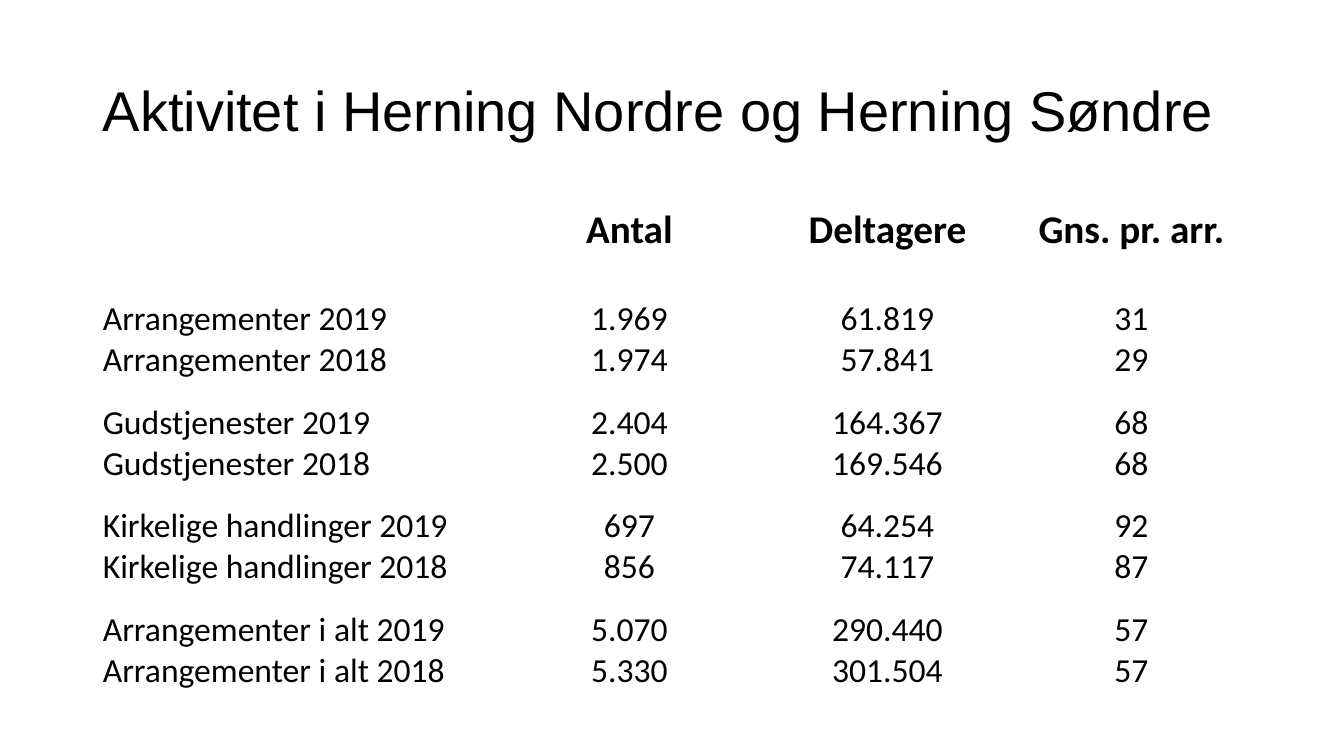
"""Build a slide with a table of church activity in Herning, 2019 against 2018."""
from pptx import Presentation
from pptx import util as u
from pptx.dml.color import RGBColor
from pptx.enum import text as t

BLACK = RGBColor(0, 0, 0)
WHITE = RGBColor(255, 255, 255)

LEFT, WIDTH = 66.24, 828
COLUMN_WIDTHS = [287.28, 192.24, 176.4, 172.08]
HEADER_HEIGHT, ROW_HEIGHT = 65.52, 74.16
HEADINGS = ["", "Antal", "Deltagere", "Gns. pr. arr."]
YEARS = ["2019", "2018"]
ACTIVITIES = {
    "Arrangementer": [("1.969", "1.974"), ("61.819", "57.841"), ("31", "29")],
    "Gudstjenester": [("2.404", "2.500"), ("164.367", "169.546"), ("68", "68")],
    "Kirkelige handlinger": [("697", "856"), ("64.254", "74.117"), ("92", "87")],
    "Arrangementer i alt": [("5.070", "5.330"), ("290.440", "301.504"), ("57", "57")],
}


class SlideBuilder:
    def __init__(self, slide):
        self.slide = slide
        self.title_font, self.title_size = "Arial", 40
        self.table_font, self.heading_size, self.body_size = "Calibri", 28, 24

    def add_span(self, para, text, font, size, bold=False, align=t.PP_ALIGN.LEFT):
        para.alignment = align
        span = para.add_run()
        span.text = text
        span.font.name = font
        span.font.size = u.Pt(size)
        span.font.bold = bold
        span.font.color.rgb = BLACK

    def title(self, text, left, top, width, height):
        box = self.slide.shapes.title
        box.left, box.top, box.width, box.height = map(u.Pt, (left, top, width, height))
        frame = box.text_frame
        frame.word_wrap = True
        frame.auto_size = t.MSO_AUTO_SIZE.NONE
        frame.vertical_anchor = t.MSO_ANCHOR.MIDDLE
        para = frame.paragraphs[0]
        para.line_spacing = 0.9
        self.add_span(para, text, self.title_font, self.title_size)

    def cell(self, cell, lines, size, bold, align):
        cell.fill.solid()
        cell.fill.fore_color.rgb = WHITE
        frame = cell.text_frame
        for index, line in enumerate(lines):
            para = frame.add_paragraph() if index else frame.paragraphs[0]
            self.add_span(para, line, self.table_font, size, bold, align)

    def table(self, rows, left, top, widths, heights):
        frame = self.slide.shapes.add_table(
            len(rows), len(widths), u.Pt(left), u.Pt(top),
            u.Pt(sum(widths)), u.Pt(sum(heights)))
        table = frame.table
        table.horz_banding = False
        for column, width in zip(table.columns, widths):
            column.width = u.Pt(width)
        for r, (row, height) in enumerate(zip(rows, heights)):
            table.rows[r].height = u.Pt(height)
            size = self.body_size if r else self.heading_size
            for c, lines in enumerate(row):
                align = t.PP_ALIGN.CENTER if c else t.PP_ALIGN.LEFT
                self.cell(table.cell(r, c), lines, size, r == 0, align)


def main():
    deck = Presentation()
    deck.slide_width, deck.slide_height = u.Pt(960), u.Pt(540)
    page = SlideBuilder(deck.slides.add_slide(deck.slide_layouts[5]))
    page.title("Aktivitet i Herning Nordre og Herning Søndre", LEFT, 28.8, WIDTH, 104.4)
    rows = [[[heading] if heading else [] for heading in HEADINGS]]
    for name, figures in ACTIVITIES.items():
        rows.append([[f"{name} {year}" for year in YEARS], *figures])
    heights = [HEADER_HEIGHT] + [ROW_HEIGHT] * len(ACTIVITIES)
    page.table(rows, LEFT, 144, COLUMN_WIDTHS, heights)
    deck.save("out.pptx")


if __name__ == "__main__":
    main()
